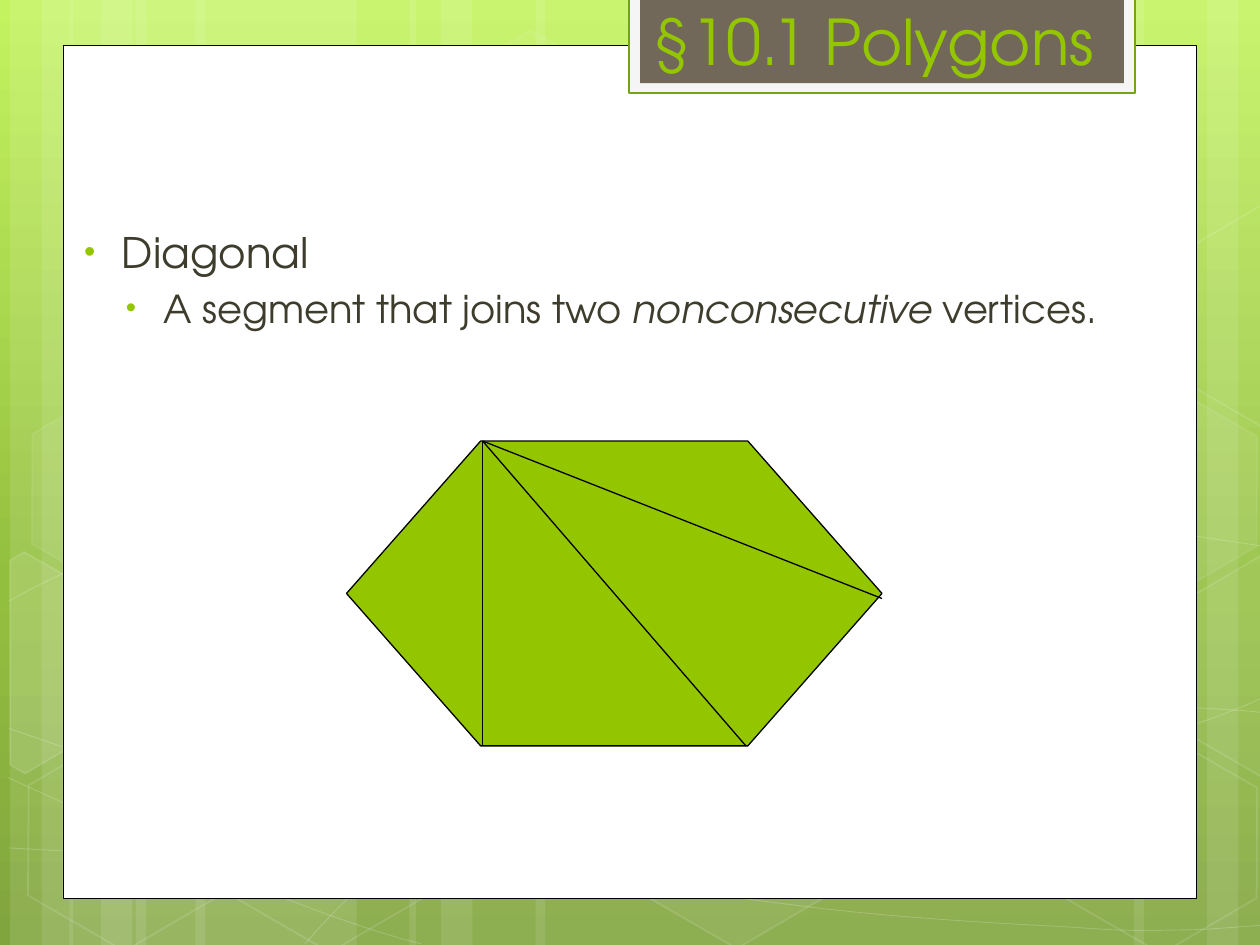
import copy
import pptx
import pptx.util
import pptx.dml.color
import pptx.enum.shapes
import pptx.enum.text
import pptx.oxml
import pptx.oxml.ns

Inches, Pt = pptx.util.Inches, pptx.util.Pt
RGB = pptx.dml.color.RGBColor
Kind = pptx.enum.shapes.MSO_SHAPE
qn = pptx.oxml.ns.qn
SPACE = 'xmlns:a="http://schemas.openxmlformats.org/drawingml/2006/main"'

WHITE = RGB(0xFF, 0xFF, 0xFF)
BLACK = RGB(0, 0, 0)
LIME = RGB(0x94, 0xC6, 0x00)
LEAF = RGB(0x74, 0xA5, 0x10)
PALE = RGB(0xF5, 0xF5, 0xF5)
BROWN = RGB(0x71, 0x68, 0x5A)
INK = RGB(0x3E, 0x3D, 0x2D)
SKY = [(0, RGB(0xC3, 0xF3, 0x5F)), (0.62, RGB(0x93, 0xBF, 0x3F)),
       (1, RGB(0x81, 0xA5, 0x3E))]
FONT = "TeX Gyre Adventor"

deck = pptx.Presentation()
deck.slide_width, deck.slide_height = Inches(10), Inches(7.5)
slide = deck.slides.add_slide(deck.slide_layouts[5])
shapes = slide.shapes
art = shapes.add_group_shape().shapes


def paint(shape, fill=None, line=None, width=1, see=100, edge=100):
    """Set fill and line; see and edge are their opacities in percent."""
    shape.shadow.inherit = False
    for form, color, alpha in ((shape.fill, fill, see), (shape.line.fill, line, edge)):
        if color is None:
            form.background()
            continue
        form.solid()
        form.fore_color.rgb = color
        if alpha < 100:
            tint = form._xPr.find(".//" + qn("a:srgbClr"))
            tint.append(pptx.oxml.parse_xml(f'<a:alpha {SPACE} val="{alpha * 1000}"/>'))
    if line is not None:
        shape.line.width = Pt(width)


def trace(points, close=False):
    """Build an outline through points given in inches."""
    dots = [(Inches(x), Inches(y)) for x, y in points]
    build = art.build_freeform(*dots[0])
    build.add_line_segments(dots[1:], close=close)
    return build.convert_to_shape()


# Background gradient, top to bottom
back = slide.background.fill
back.gradient()
back.gradient_angle = 270
first = back.gradient_stops[0]._gs
first.addnext(copy.deepcopy(first))
for stop, (place, color) in zip(back.gradient_stops, SKY):
    stop.position = place
    stop.color.rgb = color

# Pale vertical stripes
for left, wide in [(1.08, 1.75), (0.08, 0.5), (0.33, 0.83), (1.55, 1.75),
                   (0.55, 0.5), (0.8, 0.83), (7.33, 1.75), (9.58, 0.5),
                   (9, 0.83), (4.25, 3.08), (3.25, 0.5), (3.5, 0.83)]:
    stripe = art.add_shape(Kind.RECTANGLE, Inches(left), 0, Inches(wide), Inches(7.5))
    paint(stripe, WHITE, see=10)

# Thin curves: a start, then three Bezier points for each piece
CURVES = [
    [(0.07, 6.73), (0.61, 6.76), (1.15, 6.79), (1.9, 6.78), (2.65, 6.77),
     (3.58, 6.75), (4.58, 6.65), (5.58, 6.55), (7, 6.36), (7.92, 6.17),
     (8.83, 5.98), (9.77, 5.68), (10.07, 5.51)],
    [(0.07, 4.77), (0.36, 4.61), (0.65, 4.46), (1.21, 4.31), (1.78, 4.16),
     (2.59, 3.94), (3.47, 3.87), (4.36, 3.8), (5.44, 3.79), (6.54, 3.87),
     (7.64, 3.95), (9.47, 4.26), (10.07, 4.34)],
    [(0.06, 6.17), (1.27, 6.72), (2.47, 7.27), (3.34, 7.49)],
    [(0.07, 5.78), (0.38, 5.89), (0.7, 6), (1.28, 6.16), (1.86, 6.31),
     (2.73, 6.56), (3.57, 6.73), (4.4, 6.9), (5.45, 7.08), (6.28, 7.18),
     (7.11, 7.29), (8, 7.33), (8.53, 7.36), (9.05, 7.4), (9.19, 7.38),
     (9.45, 7.38), (9.71, 7.37), (9.89, 7.35), (10.07, 7.34)],
    [(2.42, 7.49), (2.6, 7.29), (2.78, 7.09), (3.02, 6.91), (3.26, 6.73),
     (3.6, 6.53), (3.88, 6.39), (4.16, 6.25), (4.33, 6.19), (4.7, 6.09),
     (5.06, 5.99), (5.73, 5.85), (6.08, 5.78), (6.44, 5.71), (6.49, 5.71),
     (6.8, 5.69), (7.11, 5.66), (7.6, 5.63), (7.94, 5.62), (8.29, 5.61),
     (8.86, 5.62), (8.86, 5.62), (9.1, 5.62), (9.3, 5.62), (9.53, 5.62),
     (9.71, 5.63), (9.88, 5.64), (9.97, 5.65), (10.06, 5.66), (10.03, 5.65),
     (10.06, 5.66)],
]
for curve in CURVES:
    wave = trace(curve)
    paint(wave, line=WHITE, width=0.5, edge=20)
    # Join each three straight steps into one Bezier piece
    steps = list(wave._element.iter(qn("a:lnTo")))
    for i in range(0, len(steps), 3):
        bend = pptx.oxml.parse_xml(f"<a:cubicBezTo {SPACE}/>")
        steps[i].addprevious(bend)
        for step in steps[i:i + 3]:
            bend.append(step[0])
            step.getparent().remove(step)

# Tilted hexagons: left, top, fill and line opacity
for left, top, see, edge in [
        (3.34, 0.36, 4, 8), (4.97, 5.89, 6, 12), (0.11, 5.91, 0, 12),
        (0.14, 3.12, 7, 8), (1.74, 5.92, 0, 12), (7.53, 4.53, 10, 12),
        (8.34, 5.93, 0, 12), (8.34, 3.14, 7, 8)]:
    cell = art.add_shape(Kind.HEXAGON, Inches(left), Inches(top), Inches(1.75), Inches(1.52))
    cell.adjustments[0] = 0.285
    cell.rotation = 30
    paint(cell, WHITE if see else None, WHITE, see=see, edge=edge)

# Hexagons cut off by the slide edge
for see, dots in [
        (10, [(0.08, 4.45), (0.19, 4.38), (0.96, 4.82), (0.95, 5.7), (0.2, 6.14), (0.08, 6.07)]),
        (4, [(9.26, 4.85), (10.01, 4.41), (10.09, 4.46), (10.09, 6.13), (10.02, 6.17), (9.26, 5.73)]),
        (0, [(9.26, 2.07), (10.01, 1.63), (10.1, 1.68), (10.09, 3.35), (10.02, 3.39), (9.26, 2.95)])]:
    paint(trace(dots, True), WHITE if see else None, WHITE, see=see, edge=12)

# White page and title tab
for left, top, wide, high, fill, line, width in [
        (0.5, 0.36, 9, 6.77, WHITE, BLACK, 0.5),
        (4.99, -0.02, 4.02, 0.76, PALE, LEAF, 1.25),
        (5.08, -0.02, 3.84, 0.68, BROWN, None, 0)]:
    panel = shapes.add_shape(Kind.RECTANGLE, Inches(left), Inches(top), Inches(wide), Inches(high))
    paint(panel, fill, line, width)

# Definition
box = shapes.add_textbox(Inches(0.5), Inches(1.75), Inches(9), Inches(1.42))
frame = box.text_frame
frame.word_wrap = True
ROWS = [(24, 0.37, [("Diagonal", False)]),
        (22, 0.7, [("A segment that joins two ", False),
                   ("nonconsecutive ", True), ("vertices.", False)])]
for level, (size, indent, runs) in enumerate(ROWS):
    para = frame.add_paragraph() if level else frame.paragraphs[0]
    para.level = level
    para.space_before = Pt(size * 0.2)
    props = para._p.get_or_add_pPr()
    props.set("marL", str(Inches(indent)))
    props.set("indent", str(Inches(-0.3)))
    bullet = pptx.oxml.parse_xml(
        f'<a:pPr {SPACE}><a:buClr><a:srgbClr val="{LIME}"/></a:buClr>'
        '<a:buSzPct val="76000"/><a:buFont typeface="Arial"/><a:buChar char="•"/></a:pPr>')
    props.extend(list(bullet))
    for words, slant in runs:
        run = para.add_run()
        run.text = words
        run.font.name, run.font.size = FONT, Pt(size)
        run.font.italic = slant
        run.font.color.rgb = INK

# Hexagon with its diagonals from one vertex
hexa = shapes.add_shape(Kind.HEXAGON, Inches(2.75), Inches(3.5), Inches(4.25), Inches(2.42))
hexa.adjustments[0] = 0.44
paint(hexa, LIME, BLACK, 0.75)
for x, y in [(3.83, 5.92), (5.92, 5.92), (7, 4.75)]:
    line = shapes.add_connector(pptx.enum.shapes.MSO_CONNECTOR.STRAIGHT,
                                Inches(3.83), Inches(3.5), Inches(x), Inches(y))
    line.line.color.rgb = BLACK
    line.line.width = Pt(0.75)
    line._element.spPr.append(pptx.oxml.parse_xml(f"<a:effectLst {SPACE}/>"))

# Title, brought in front of its tab
title = shapes.title
title.left, title.top = Inches(5.08), Inches(-0.12)
title.width, title.height = Inches(3.84), Inches(0.79)
shapes._spTree.append(title._element)
title.text_frame.vertical_anchor = pptx.enum.text.MSO_ANCHOR.BOTTOM
para = title.text_frame.paragraphs[0]
para.alignment = pptx.enum.text.PP_ALIGN.LEFT
run = para.add_run()
run.text = "§10.1 Polygons"
run.font.name, run.font.size = FONT, Pt(36)
run.font.color.rgb = LIME

deck.save("out.pptx")
